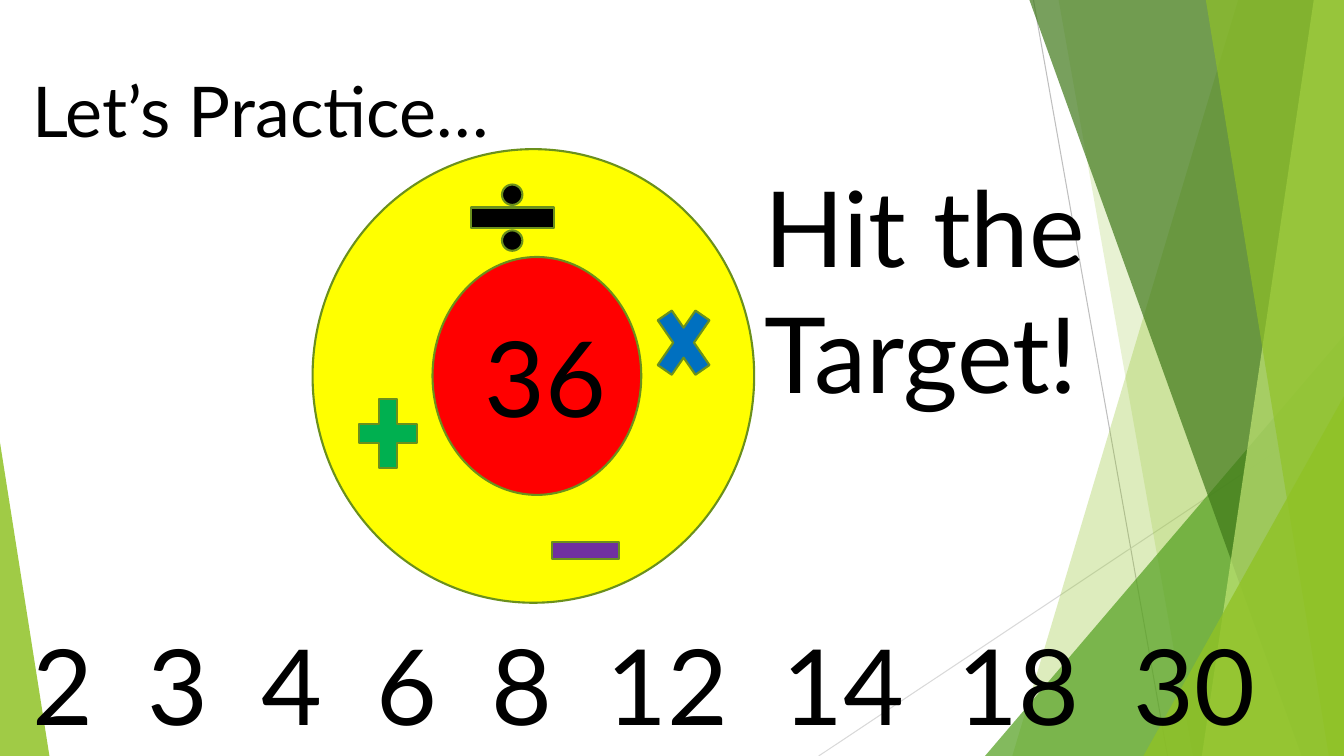
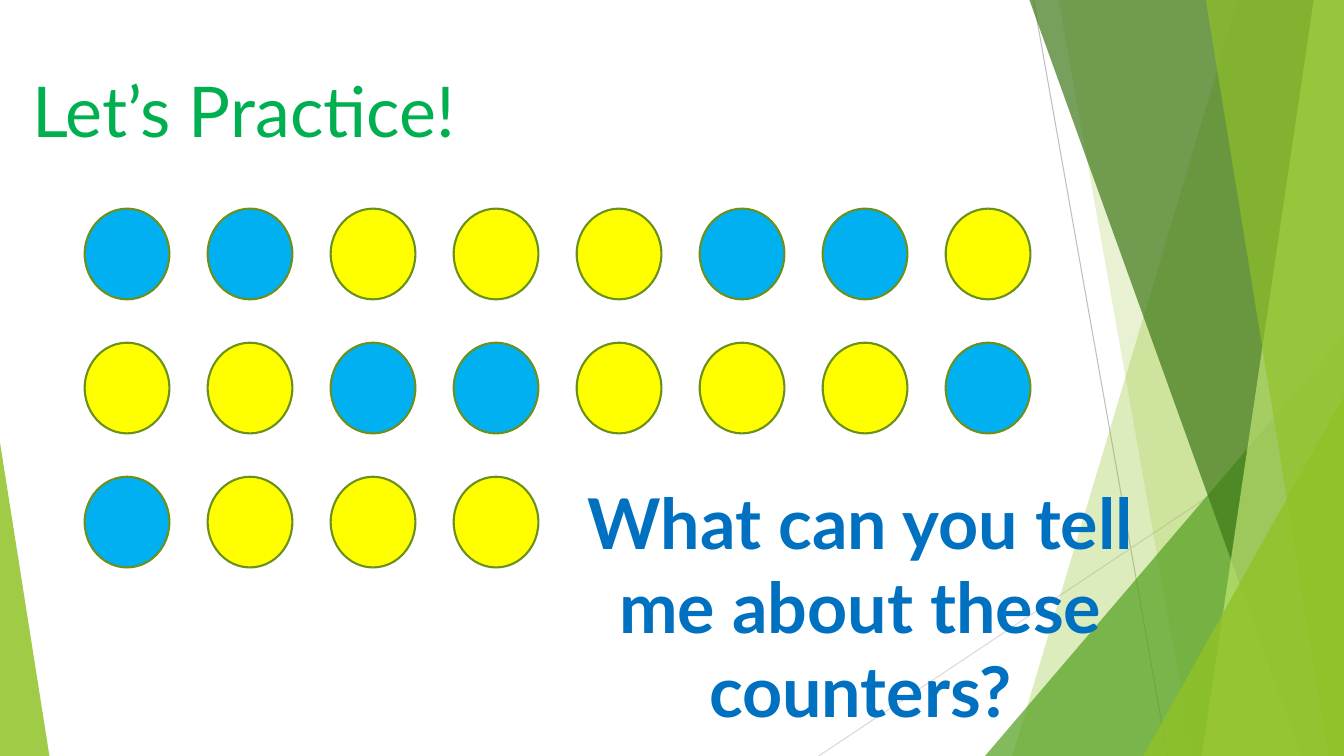
"""Build two maths practice slides: a target number game and a set of counters."""

import dataclasses
import itertools
import typing

import lxml.etree
import pptx
import pptx.dml.color
import pptx.dml.fill
import pptx.enum.shapes
import pptx.enum.text
import pptx.oxml.ns
import pptx.presentation
import pptx.shapes.autoshape
import pptx.slide
import pptx.text.text
import pptx.util

Inches = pptx.util.Inches
Shapes = pptx.enum.shapes.MSO_SHAPE
Align = pptx.enum.text.PP_ALIGN

SLIDE_WIDTH, SLIDE_HEIGHT = 13.33, 7.5
FONT_NAME = "Lato"
TITLE_SIZE, DISPLAY_SIZE = 50, 75
BLACK, GREEN, BLUE = "000000", "00B050", "0070C0"
YELLOW, SKY, RED, PURPLE = "FFFF00", "00B0F0", "FF0000", "7030A0"
LIME, OUTLINE = "90C226", "6B901C"


class Box(typing.NamedTuple):
    left: float
    top: float
    width: float
    height: float

    def lengths(self) -> list[pptx.util.Length]:
        return [Inches(value) for value in self]


@dataclasses.dataclass(frozen=True)
class Ray:
    start: tuple[float, float]
    end: tuple[float, float]
    color: str


@dataclasses.dataclass(frozen=True)
class Band:
    top_x: float
    bottom_x: float
    color: str
    opacity: int


@dataclasses.dataclass(frozen=True)
class Corner:
    box: Box
    apex: float
    color: str
    opacity: int


@dataclasses.dataclass(frozen=True)
class Figure:
    kind: Shapes
    box: Box
    color: str


RAYS = [
    Ray((10.25, 0), (11.58, SLIDE_HEIGHT), "BFBFBF"),
    Ray((SLIDE_WIDTH, 4.03), (8.12, SLIDE_HEIGHT), "D9D9D9"),
]
FACETS = [
    Band(12.28, 10.04, LIME, 30),
    Band(10.5, 11.83, LIME, 20),
    Corner(Box(9.77, 3.33, 3.56, 4.17), 1, "54A021", 72),
    Band(10.21, 12.91, "3F7819", 70),
    Band(13.03, 11.92, "C0E474", 70),
    Band(11.96, 13.18, LIME, 65),
    Corner(Box(11.34, 3.93, 1.99, 3.57), 1, LIME, 80),
    Corner(Box(0, 4.39, 0.49, 3.11), 0, LIME, 85),
]
TARGET_FIGURES = [
    Figure(Shapes.OVAL, Box(3.1, 1.48, 4.38, 4.5), YELLOW),
    Figure(Shapes.OVAL, Box(4.29, 2.55, 2.07, 2.36), RED),
    Figure(Shapes.MATH_DIVIDE, Box(4.52, 1.73, 1.12, 0.86), BLACK),
    Figure(Shapes.MATH_MULTIPLY, Box(6.42, 2.88, 0.72, 1.04), BLUE),
    Figure(Shapes.MATH_PLUS, Box(3.46, 3.83, 0.78, 0.94), GREEN),
    Figure(Shapes.MATH_MINUS, Box(5.35, 5.11, 0.91, 0.7), PURPLE),
]
NUMBERS = ["2", "3", "4", "6", "8", "12", "14", "18", "30"]
DIGIT_WIDTH, NUMBER_GAP = 0.6, 0.54
COUNTER_ROWS = ["BBYYYBBY", "YYBBYYYB", "BYYY"]
COUNTER_COLORS = {"B": SKY, "Y": YELLOW}
COUNTER_LEFT, COUNTER_TOP = 0.84, 2.07
COUNTER_WIDTH, COUNTER_HEIGHT = 0.84, 0.9
COLUMN_PITCH, ROW_PITCH = 1.22, 1.33


def rgb(color: str) -> pptx.dml.color.RGBColor:
    return pptx.dml.color.RGBColor.from_string(color)


def set_fill(fill: pptx.dml.fill.FillFormat, color: str) -> None:
    fill.solid()
    fill.fore_color.rgb = rgb(color)


def style_facet(shape: pptx.shapes.autoshape.Shape, color: str, opacity: int) -> None:
    shape.shadow.inherit = False
    set_fill(shape.fill, color)
    shape.line.fill.background()
    solid_color = shape._element.spPr.find(".//" + pptx.oxml.ns.qn("a:srgbClr"))
    alpha = lxml.etree.SubElement(solid_color, pptx.oxml.ns.qn("a:alpha"))
    alpha.set("val", str(opacity * 1000))


def add_ray(slide: pptx.slide.Slide, ray: Ray) -> None:
    points = [Inches(value) for value in ray.start + ray.end]
    connector = slide.shapes.add_connector(
        pptx.enum.shapes.MSO_CONNECTOR.STRAIGHT, *points
    )
    set_fill(connector.line.fill, ray.color)
    connector.line.width = pptx.util.Pt(0.75)
    lxml.etree.SubElement(connector._element.spPr, pptx.oxml.ns.qn("a:effectLst"))


def add_band(slide: pptx.slide.Slide, band: Band) -> None:
    outline = slide.shapes.build_freeform(Inches(band.top_x), 0)
    corners = [
        (SLIDE_WIDTH, 0),
        (SLIDE_WIDTH, SLIDE_HEIGHT),
        (band.bottom_x, SLIDE_HEIGHT),
    ]
    outline.add_line_segments([(Inches(x), Inches(y)) for x, y in corners], close=True)
    style_facet(outline.convert_to_shape(), band.color, band.opacity)


def add_corner(slide: pptx.slide.Slide, corner: Corner) -> None:
    shape = slide.shapes.add_shape(Shapes.ISOSCELES_TRIANGLE, *corner.box.lengths())
    shape.adjustments[0] = corner.apex
    style_facet(shape, corner.color, corner.opacity)


def add_figure(slide: pptx.slide.Slide, figure: Figure) -> None:
    shape = slide.shapes.add_shape(figure.kind, *figure.box.lengths())
    shape.shadow.inherit = False
    set_fill(shape.fill, figure.color)
    set_fill(shape.line.fill, OUTLINE)
    shape.line.width = pptx.util.Pt(1.5)


def add_tab_stops(paragraph: pptx.text.text._Paragraph, stops: list[float]) -> None:
    properties = paragraph._p.get_or_add_pPr()
    tab_list = lxml.etree.SubElement(properties, pptx.oxml.ns.qn("a:tabLst"))
    for stop in stops:
        tab = lxml.etree.SubElement(tab_list, pptx.oxml.ns.qn("a:tab"))
        tab.set("pos", str(Inches(stop)))
        tab.set("algn", "l")


def add_text(
    slide: pptx.slide.Slide,
    text: str,
    box: Box,
    size: int = DISPLAY_SIZE,
    color: str = BLACK,
    bold: bool = False,
    align: Align = Align.LEFT,
) -> pptx.text.text._Paragraph:
    text_frame = slide.shapes.add_textbox(*box.lengths()).text_frame
    text_frame.word_wrap = True
    text_frame.auto_size = pptx.enum.text.MSO_AUTO_SIZE.SHAPE_TO_FIT_TEXT
    text_frame.text = text
    paragraph = text_frame.paragraphs[0]
    paragraph.alignment = align
    for run in paragraph.runs:
        run.font.name = FONT_NAME
        run.font.size = pptx.util.Pt(size)
        run.font.bold = bold
        run.font.color.rgb = rgb(color)
    return paragraph


def add_practice_slide(
    presentation: pptx.presentation.Presentation, title: str, title_color: str
) -> pptx.slide.Slide:
    slide = presentation.slides.add_slide(presentation.slide_layouts[6])
    for ray in RAYS:
        add_ray(slide, ray)
    for facet in FACETS:
        if isinstance(facet, Band):
            add_band(slide, facet)
        else:
            add_corner(slide, facet)
    add_text(slide, title, Box(0.22, 0.62, 5.41, 0.94), TITLE_SIZE, title_color)
    return slide


def add_target_slide(presentation: pptx.presentation.Presentation) -> None:
    slide = add_practice_slide(presentation, "Let’s Practice…", BLACK)
    for figure in TARGET_FIGURES:
        add_figure(slide, figure)
    add_text(slide, "36", Box(4.71, 3.05, 1.66, 1.36))
    add_text(slide, "Hit the Target!", Box(7.48, 1.56, 3.66, 2.63))
    numbers = add_text(slide, "\t".join(NUMBERS), Box(0.22, 6.11, 12.81, 1.36))
    steps = [len(number) * DIGIT_WIDTH + NUMBER_GAP for number in NUMBERS[:-1]]
    add_tab_stops(numbers, list(itertools.accumulate(steps)))


def add_counters_slide(presentation: pptx.presentation.Presentation) -> None:
    slide = add_practice_slide(presentation, "Let’s Practice!", GREEN)
    add_text(
        slide,
        "What can you tell me about these counters?",
        Box(5.43, 4.71, 6.21, 2.63),
        TITLE_SIZE,
        BLUE,
        bold=True,
        align=Align.CENTER,
    )
    for row, counters in enumerate(COUNTER_ROWS):
        for column, counter in enumerate(counters):
            box = Box(
                COUNTER_LEFT + column * COLUMN_PITCH,
                COUNTER_TOP + row * ROW_PITCH,
                COUNTER_WIDTH,
                COUNTER_HEIGHT,
            )
            add_figure(slide, Figure(Shapes.OVAL, box, COUNTER_COLORS[counter]))


def main() -> None:
    presentation = pptx.Presentation()
    presentation.slide_width = Inches(SLIDE_WIDTH)
    presentation.slide_height = Inches(SLIDE_HEIGHT)
    add_target_slide(presentation)
    add_counters_slide(presentation)
    presentation.save("out.pptx")


if __name__ == "__main__":
    main()
